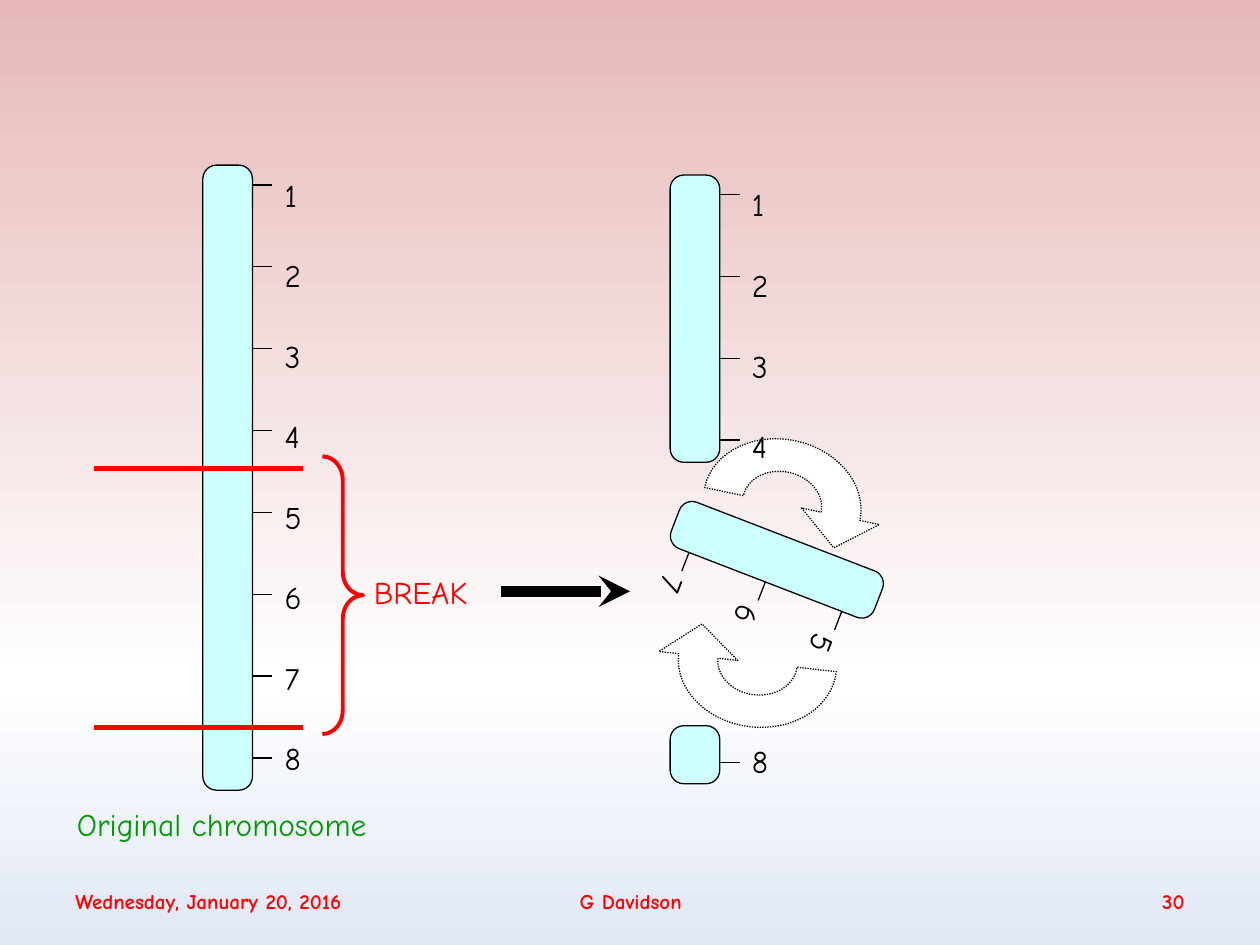
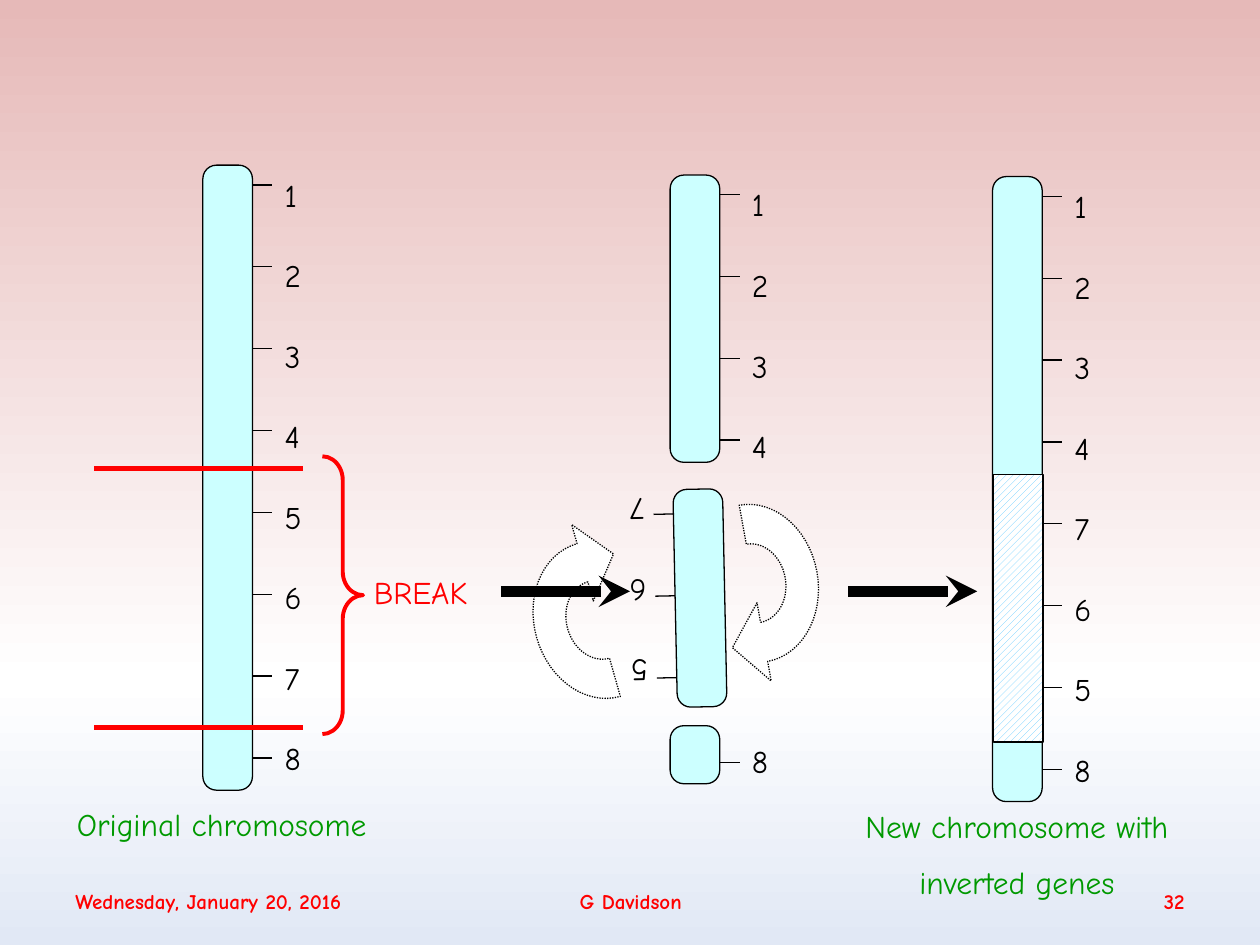
import copy
import math

from pptx import Presentation
from pptx import util as u
from pptx.dml.color import RGBColor
from pptx.enum import dml, shapes, text
from pptx.oxml.ns import qn
from lxml import etree

Cm, Pt = u.Cm, u.Pt
ALIGN = text.PP_ALIGN
FONT = "Comic Neue"
BLACK = RGBColor(0x00, 0x00, 0x00)
WHITE = RGBColor(0xFF, 0xFF, 0xFF)
RED = RGBColor(0xFF, 0x00, 0x00)
GREEN = RGBColor(0x00, 0x99, 0x00)
AQUA = RGBColor(0xCC, 0xFF, 0xFF)
SKY = RGBColor(0x66, 0xCC, 0xFF)
ROSE = RGBColor(0xE6, 0xB9, 0xB8)
MIST = RGBColor(0xE1, 0xE8, 0xF5)

# Lengths below are centimetres
WIDE = 1.0      # width of a chromosome
TICK = 0.4      # length of a gene mark
PITCH = 1.65    # distance between gene marks
BOX = 1.8       # width of a label box


def write(slide, x, y, w, h, lines, color, size=18, align=ALIGN.LEFT, lead=1.0):
    box = slide.shapes.add_textbox(Cm(x), Cm(y), Cm(w), Cm(h))
    frame = box.text_frame
    frame.word_wrap = True
    frame.text = "\n".join(lines)
    for para in frame.paragraphs:
        para.alignment = align
        para.line_spacing = lead
        para.space_before = Pt(10.4 if size == 18 else 0)
        para.font.name = FONT
        para.font.size = Pt(size)
        para.font.color.rgb = color
    return box


def rule(slide, x1, y1, x2, y2, color=BLACK, width=0.75, arrow=False):
    line = slide.shapes.add_connector(
        shapes.MSO_CONNECTOR.STRAIGHT, Cm(x1), Cm(y1), Cm(x2), Cm(y2))
    line.line.color.rgb = color
    line.line.width = Pt(width)
    props = line._element.spPr
    if arrow:
        etree.SubElement(props.find(qn("a:ln")), qn("a:tailEnd"), type="stealth")
    etree.SubElement(props, qn("a:effectLst"))


deck = Presentation()
deck.slide_width, deck.slide_height = Cm(25.4), Cm(19.05)

# Shared background
master = deck.slide_master
fill = master.background.fill
fill.gradient()
fill.gradient_angle = 270
stops = master.element.find(".//" + qn("a:gsLst"))
stops.append(copy.deepcopy(stops[-1]))
for stop, (place, color) in zip(fill.gradient_stops,
                                [(0, ROSE), (0.72, WHITE), (1, MIST)]):
    stop.position = place
    stop.color.rgb = color

# Strand: centre x, top, height, first mark, label top, label centre, turn, genes
first = (4.59, 3.33, 12.6, 0.4, -0.41, 1.8, 0, "12345678")
upper = (14.01, 3.53, 5.79, 0.39, -0.41, 1.8, 0, "1234")
lower = (14.01, 14.63, 1.17, 0.74, -0.3, 1.8, 0, "8")
final = (20.51, 3.56, 12.6, 0.4, -0.41, 1.8, 0, "12347658")
tilted = (15.66, 9.09, 4.39, 0.6, -0.28, 1.73, 111.1, "567")
flipped = (14.11, 9.86, 4.39, 0.6, -0.28, 1.73, 178.8, "567")

# Page number, strands, then centre and turn of each curved arrow
pages = [
    (30, [first, tilted, upper, lower],
     [(15.77, 10.16, 12), (15.27, 13.36, 186.5)]),
    (32, [first, upper, flipped, lower, final],
     [(15.19, 11.76, 79.7), (12.07, 12.5, 254.2)]),
]

# Curved arrow outline around its centre: inner arc, outer arc, head
arc = [math.radians(a) for a in range(0, 181, 6)]
swirl = [complex(0.8 * math.cos(a), -0.65 * math.sin(a)) for a in arc]
swirl += [complex(1.6 * math.cos(a), -1.3 * math.sin(a)) for a in reversed(arc)]
swirl += [2, 1.2 + 0.65j, 0.4]

for number, strands, curves in pages:
    slide = deck.slides.add_slide(deck.slide_layouts[6])

    for x, w, words, align in [
            (1.27, 8.43, "Wednesday, January 20, 2016", ALIGN.LEFT),
            (8.69, 8.05, "G Davidson", ALIGN.CENTER),
            (18.21, 5.92, str(number), ALIGN.RIGHT)]:
        foot = write(slide, x, 17.65, w, 1.02, [words], RED, 12, align)
        foot.text_frame.vertical_anchor = text.MSO_ANCHOR.MIDDLE
        foot.text_frame.paragraphs[0].font.bold = True

    for x, y, angle in curves:
        turn = complex(math.cos(math.radians(angle)), math.sin(math.radians(angle)))
        spots = [complex(x, y) + turn * z for z in swirl]
        spots = [(Cm(z.real), Cm(z.imag)) for z in spots]
        path = slide.shapes.build_freeform(*spots[0])
        path.add_line_segments(spots[1:], close=True)
        curve = path.convert_to_shape()
        curve.shadow.inherit = False
        curve.fill.solid()
        curve.fill.fore_color.rgb = WHITE
        curve.line.color.rgb = BLACK
        curve.line.width = Pt(0.75)
        curve.line.dash_style = dml.MSO_LINE.ROUND_DOT

    for x, top, tall, mark, head, side, angle, genes in strands:
        bar = slide.shapes.add_shape(
            shapes.MSO_SHAPE.ROUNDED_RECTANGLE,
            Cm(x - WIDE / 2), Cm(top), Cm(WIDE), Cm(tall))
        bar.adjustments[0] = 0.274
        bar.rotation = angle
        bar.shadow.inherit = False
        bar.fill.solid()
        bar.fill.fore_color.rgb = AQUA
        bar.line.color.rgb = BLACK
        bar.line.width = Pt(0.75)

        mid = complex(x, top + tall / 2)
        turn = complex(math.cos(math.radians(angle)), math.sin(math.radians(angle)))
        for i in range(len(genes)):
            y = mark + i * PITCH - tall / 2
            start = mid + turn * complex(WIDE / 2, y)
            end = mid + turn * complex(WIDE / 2 + TICK, y)
            rule(slide, start.real, start.imag, end.real, end.imag)

        high = 1.64 * len(genes) - 0.12
        spot = mid + turn * complex(side, head + (high - tall) / 2)
        label = write(slide, spot.real - BOX / 2, spot.imag - high / 2,
                      BOX, high, genes, BLACK, lead=1.65)
        label.rotation = angle

    # Break in the first chromosome
    for y in (9.45, 14.66):
        rule(slide, 1.9, y, 6.1, y, RED, 3)
    brace = slide.shapes.add_shape(
        shapes.MSO_SHAPE.RIGHT_BRACE, Cm(6.5), Cm(9.2), Cm(0.82), Cm(5.6))
    brace.adjustments[0] = 0.582
    brace.shadow.inherit = False
    brace.fill.background()
    brace.line.color.rgb = RED
    brace.line.width = Pt(2.25)
    write(slide, 7.29, 11.43, 3, 1.02, ["BREAK"], RED)
    write(slide, 1.3, 16.1, 7.6, 1.02, ["Original chromosome"], GREEN)
    rule(slide, 10.1, 11.92, 12.7, 11.92, width=6, arrow=True)

# Inverted part, on the last slide only
hatch = slide.shapes.add_shape(
    shapes.MSO_SHAPE.RECTANGLE, Cm(20.03), Cm(9.56), Cm(WIDE), Cm(5.4))
hatch.shadow.inherit = False
hatch.fill.patterned()
hatch.fill.pattern = dml.MSO_PATTERN.WIDE_UPWARD_DIAGONAL
hatch.fill.fore_color.rgb = SKY
hatch.fill.back_color.rgb = WHITE
hatch.line.color.rgb = BLACK
hatch.line.width = Pt(0.75)
write(slide, 16.9, 16.15, 7.2, 2.16, ["New chromosome with", "inverted genes"],
      GREEN, align=ALIGN.CENTER)
rule(slide, 17.1, 11.92, 19.7, 11.92, width=6, arrow=True)

deck.save("out.pptx")
